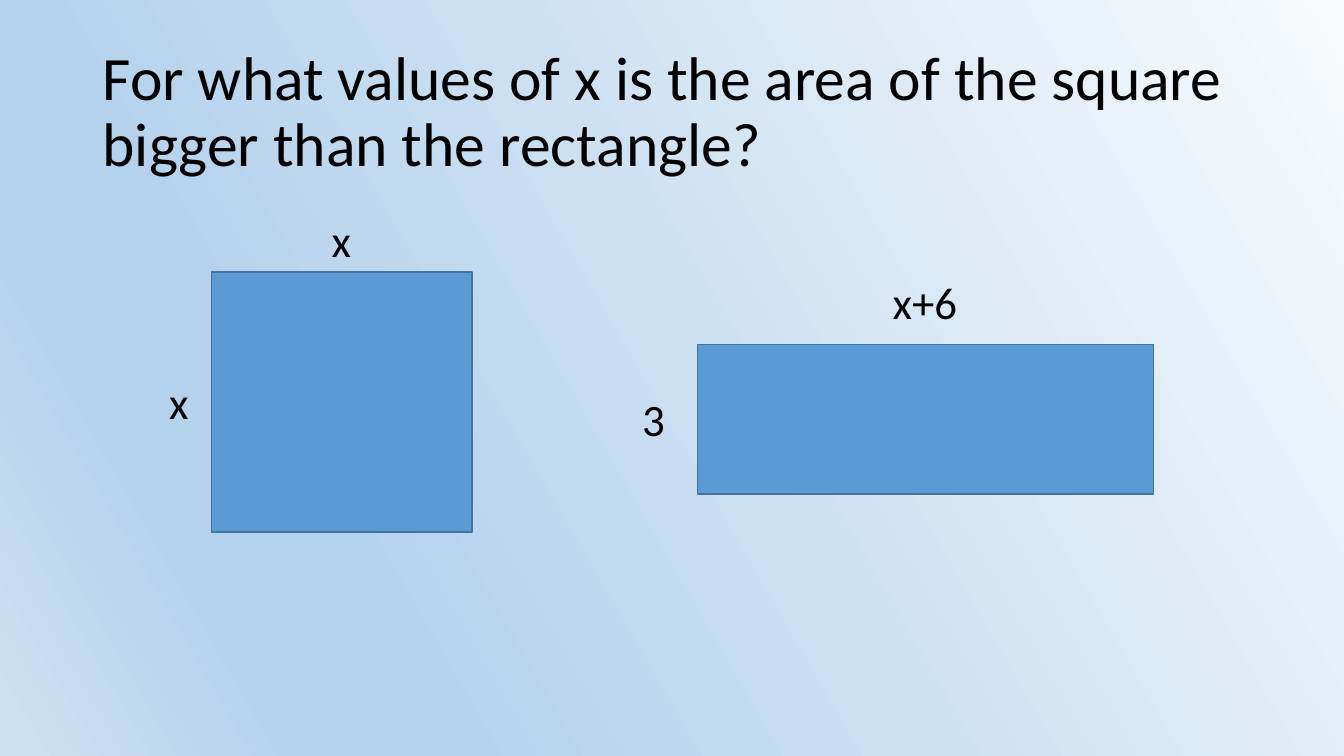
from lxml.etree import SubElement
from pptx import Presentation
from pptx.dml.color import RGBColor
from pptx.enum.shapes import MSO_SHAPE
from pptx.enum.text import MSO_ANCHOR, MSO_AUTO_SIZE
from pptx.oxml.ns import qn
from pptx.util import Inches, Pt

BLACK = RGBColor(0x00, 0x00, 0x00)
BLUE = RGBColor(0x5B, 0x9B, 0xD5)
EDGE = RGBColor(0x43, 0x73, 0x9E)
PALE = RGBColor(0xF7, 0xFA, 0xFD)
SKY = RGBColor(0xB5, 0xD2, 0xEC)
MIST = RGBColor(0xCE, 0xE1, 0xF2)
STOPS = [(0, PALE), (74, SKY), (83, SKY), (100, MIST)]
WIDE, HIGH = 13.33, 7.5
LINE = 0.64


def paint_back(slide):
    fill = slide.background.fill
    fill.gradient()
    fill.gradient_angle = 210
    stops = next(slide.element.iter(qn("a:gsLst")))
    for old in list(stops):
        stops.remove(old)
    for share, color in STOPS:
        stop = SubElement(stops, qn("a:gs"), pos=str(share * 1000))
        SubElement(stop, qn("a:srgbClr"), val=str(color))


def add_text(slide, box, words, size, wrap):
    frame = slide.shapes.add_textbox(*map(Inches, box)).text_frame
    frame.word_wrap = wrap
    frame.auto_size = MSO_AUTO_SIZE.NONE if wrap else MSO_AUTO_SIZE.SHAPE_TO_FIT_TEXT
    run = frame.paragraphs[0].add_run()
    run.text = words
    run.font.name = "Calibri"
    run.font.size = Pt(size)
    run.font.color.rgb = BLACK
    return frame


def add_title(slide, box, words):
    frame = add_text(slide, box, words, 44, True)
    frame.vertical_anchor = MSO_ANCHOR.MIDDLE
    frame.paragraphs[0].line_spacing = 0.9


def add_figure(slide, box, top, side):
    x, y, w, h = box
    shape = slide.shapes.add_shape(MSO_SHAPE.RECTANGLE, *map(Inches, box))
    shape.shadow.inherit = False
    shape.fill.solid()
    shape.fill.fore_color.rgb = BLUE
    shape.line.color.rgb = EDGE
    shape.line.width = Pt(1)
    words, width, gap = top
    place = (x + (w - width) / 2, y - gap - LINE, width, LINE)
    add_text(slide, place, words, 32, False)
    words, width, gap = side
    place = (x - gap - width, y + (h - LINE) / 2, width, LINE)
    add_text(slide, place, words, 32, False)


def main():
    deck = Presentation()
    deck.slide_width, deck.slide_height = Inches(WIDE), Inches(HIGH)
    slide = deck.slides.add_slide(deck.slide_layouts[6])
    paint_back(slide)
    add_title(slide, (0.92, 0.4, 11.5, 1.45),
              "For what values of x is the area of the square bigger than the rectangle?")
    add_figure(slide, (2.1, 2.7, 2.58, 2.58), ("x", 0.4, 0), ("x", 0.4, 0.12))
    add_figure(slide, (6.92, 3.42, 4.52, 1.48), ("x+6", 0.85, 0.1), ("3", 0.43, 0.22))
    deck.save("out.pptx")


if __name__ == "__main__":
    main()
